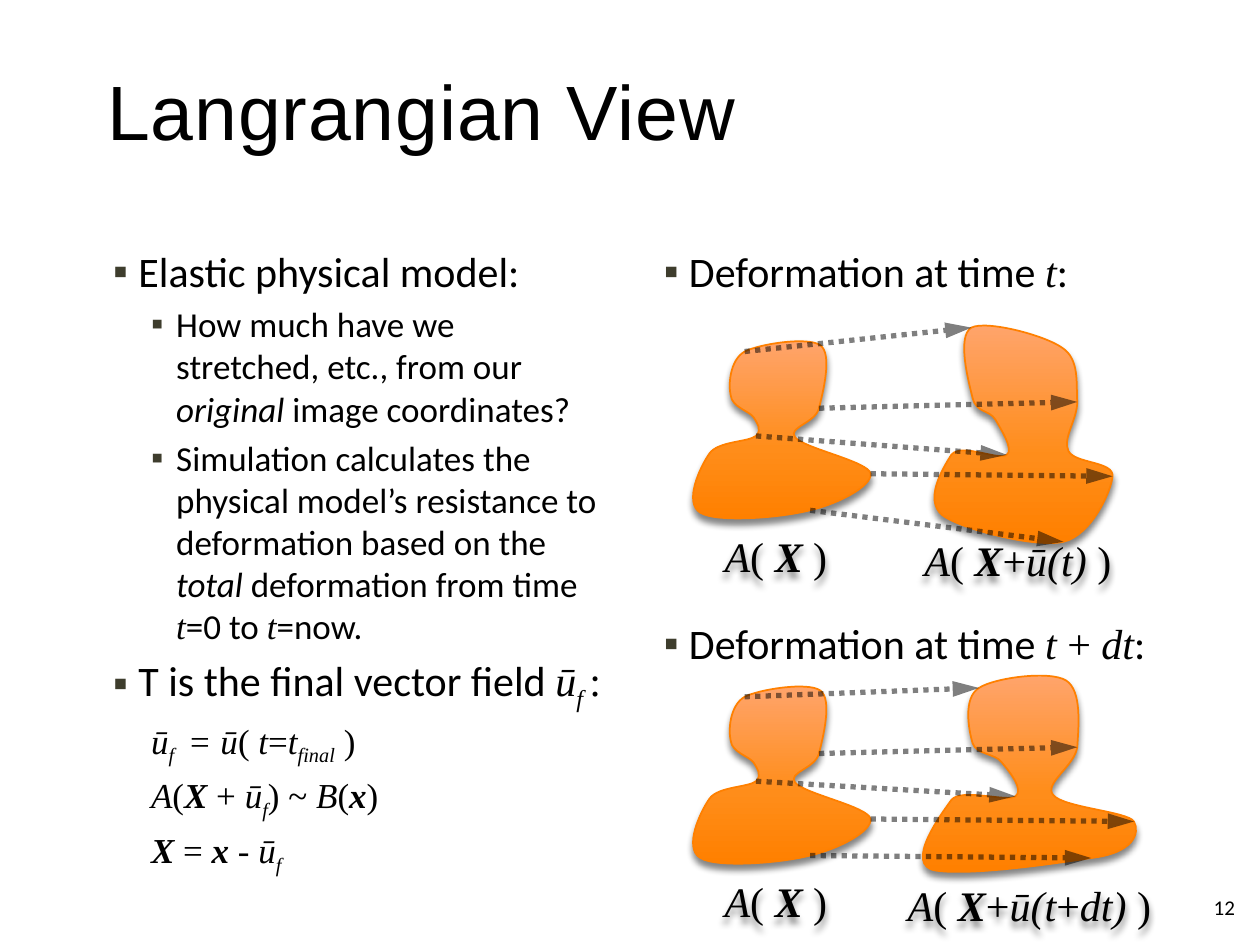
"""Build the slide comparing deformation of an elastic body at two time steps."""
import lxml.etree
import pptx
import pptx.dml.color
import pptx.enum.dml
import pptx.enum.shapes
import pptx.enum.text
import pptx.oxml
import pptx.oxml.ns
import pptx.util

PX = 9144
COLORS = {"text": "000000", "bullet": "3E3D2D", "top": "FFA46B", "middle": "FF8D1A", "base": "FF8000"}
GRADIENT = [(0, "top"), (60, "middle"), (100, "base")]
SANS, MATH, HEADING = "Calibri", "Times New Roman", "Arial"
ANCHOR = pptx.enum.text.MSO_ANCHOR
ALIGN = pptx.enum.text.PP_ALIGN

LEVELS = {
    "point": {"size": 24, "left": 25, "hang": 20, "before": 5},
    "sub": {"size": 20, "left": 55, "hang": 20, "before": 4},
    "formula": {"size": 20, "left": 35, "hang": 0, "before": 4},
    "later": {"size": 24, "left": 25, "hang": 20, "before": 184},
    "label": {"size": 24, "left": 0, "hang": 0, "before": 0},
    "number": {"size": 12, "left": 0, "hang": 0, "before": 0},
}
MODEL = [
    ("point", [("Elastic physical model:", "")]),
    ("sub", [("How much have we stretched, etc., from our ", ""), ("original", "i"), (" image coordinates?", "")]),
    ("sub", [("Simulation calculates the physical model’s resistance to deformation based on the ", ""),
             ("total", "i"), (" deformation from time ", ""), ("t", "mi"), ("=0 to ", ""), ("t", "mi"), ("=now.", "")]),
    ("point", [("T is the final vector field ", ""), ("ū", "mi"), ("f ", "mis"), (":", "m")]),
    ("formula", [("ū", "mi"), ("f ", "mis"), (" = ū", "mi"), ("( ", "m"), ("t", "mi"), ("=", "m"),
                 ("t", "mi"), ("final", "mis"), (" )", "m")]),
    ("formula", [("A", "mi"), ("(", "m"), ("X ", "mbi"), ("+ ", "m"), ("ū", "mi"), ("f", "mis"),
                 (") ~", "m"), (" B", "mi"), ("(", "m"), ("x", "mbi"), (")", "m")]),
    ("formula", [("X ", "mbi"), ("= ", "m"), ("x ", "mbi"), ("- ", "m"), ("ū", "mi"), ("f", "mis")]),
]
TIMES = [
    ("point", [("Deformation at time ", ""), ("t", "mi"), (":", "")]),
    ("later", [("Deformation at time ", ""), ("t ", "mi"), ("+ ", "m"), ("dt", "mi"), (":", "")]),
]
LABEL_X = [("A", "mi"), ("( ", "m"), ("X ", "mbi"), (") ", "m")]
LABEL_T = [("A", "mi"), ("( ", "m"), ("X", "mbi"), ("+", "m"), ("ū(t) ", "mi"), (") ", "m")]
LABEL_DT = [("A", "mi"), ("( ", "m"), ("X", "mbi"), ("+", "m"), ("ū(t", "mi"), ("+", "m"), ("dt) ", "mi"), (")", "m")]

REST = [(598, 331), (594, 326), (581, 323), (580, 314), (578, 306), (579, 286), (591, 279),
        (603, 273), (641, 267), (651, 274), (661, 281), (653, 312), (650, 324), (647, 336), (625, 339), (631, 347),
        (638, 356), (689, 366), (691, 376), (692, 386), (665, 400), (643, 405), (620, 411), (569, 415), (556, 407),
        (542, 399), (556, 370), (563, 360), (570, 350), (594, 351), (600, 346), (605, 341), (601, 336), (598, 331)]
AT_T = [(790, 333), (785, 325), (775, 328), (772, 316), (769, 304), (759, 267), (771, 260),
        (783, 254), (829, 266), (843, 276), (857, 285), (854, 305), (855, 319), (855, 333), (843, 348), (848, 358),
        (853, 368), (884, 366), (883, 378), (882, 390), (866, 425), (844, 430), (821, 435), (763, 420), (748, 409),
        (733, 397), (748, 372), (755, 361), (763, 351), (793, 366), (799, 361), (805, 357), (794, 340), (790, 333)]
AT_DT = [(795, 605), (790, 598), (775, 599), (772, 590), (769, 580), (764, 554), (777, 546),
         (789, 538), (833, 532), (846, 540), (859, 548), (856, 577), (855, 593), (853, 608), (828, 622), (836, 631),
         (844, 641), (895, 644), (900, 652), (905, 661), (900, 677), (866, 681), (833, 686), (771, 695), (743, 691),
         (716, 687), (748, 645), (755, 635), (763, 625), (800, 637), (806, 632), (813, 627), (801, 612), (795, 605)]
REST_LATER = [(x, y + 274) for x, y in REST]
STAGES = [
    [(REST, (550, 271, 141, 141), LABEL_X, 441), (AT_T, (742, 258, 141, 172), LABEL_T, 444)],
    [(REST_LATER, (550, 544, 141, 141), LABEL_X, 715), (AT_DT, (732, 536, 170, 155), LABEL_DT, 718)],
]
LINKED_KNOTS = [7, 6, 10, 2, 4]


def emu(*lengths):
    return [n * PX for n in lengths]


def rgb(name):
    return pptx.dml.color.RGBColor.from_string(COLORS[name])


def element(parent, tag, **attrs):
    return lxml.etree.SubElement(parent, pptx.oxml.ns.qn(tag), {k: str(v) for k, v in attrs.items()})


def emptied(parent, tag):
    found = parent.find(".//" + pptx.oxml.ns.qn(tag))
    for child in list(found):
        found.remove(child)
    return found


def apply(target, values):
    for name, value in values.items():
        setattr(target, name, value)


def add_run(p, text, style, size, font=None):
    r = p.add_run()
    r.text = text
    apply(r.font, {"name": font or (MATH if "m" in style else SANS), "size": pptx.util.Pt(size),
                   "italic": "i" in style, "bold": "b" in style})
    r.font.color.rgb = rgb("text")
    if "s" in style:
        r.font._element.set("baseline", "-25000")
    return r


def add_text(s, box, paragraphs, align=ALIGN.LEFT, **frame):
    sp = s.shapes.add_textbox(*emu(*box))
    tf = sp.text_frame
    apply(tf, {"word_wrap": True, **frame})
    for i, (level, runs) in enumerate(paragraphs):
        form = LEVELS[level]
        p = tf.paragraphs[0] if i == 0 else tf.add_paragraph()
        pPr = p._p.get_or_add_pPr()
        pPr.set("marL", str(form["left"] * PX))
        pPr.set("indent", str(-form["hang"] * PX))
        if form["hang"]:
            element(element(pPr, "a:buClr"), "a:srgbClr", val=COLORS["bullet"])
            element(pPr, "a:buFont", typeface=HEADING)
            element(pPr, "a:buChar", char="▪")
        apply(p, {"alignment": align, "space_before": pptx.util.Pt(form["before"] if i else 0)})
        for text, style in runs:
            add_run(p, text, style, form["size"])
    return sp


def add_shadow(sp):
    sp.shadow.inherit = False
    effects = sp._element.spPr.find(pptx.oxml.ns.qn("a:effectLst"))
    shadow = element(effects, "a:outerShdw", blurRad=48260, dist=38100, dir=5400000, algn="ctr", rotWithShape=0)
    element(element(shadow, "a:srgbClr", val=COLORS["text"]), "a:alpha", val=48000)


def add_body(s, points, box):
    left, top, width, height = box
    builder = s.shapes.build_freeform(left, top, scale=PX)
    builder.add_line_segments([(left + width, top), (left + width, top + height), (left, top + height)])
    sp = builder.convert_to_shape()
    outline = emptied(sp._element.spPr, "a:path")
    local = [(x - left, y - top) for x, y in points]
    for tag, part in [("a:moveTo", local[:1])] + [("a:cubicBezTo", local[i:i + 3]) for i in range(1, len(local), 3)]:
        step = element(outline, tag)
        for x, y in part:
            element(step, "a:pt", x=x, y=y)
    element(outline, "a:close")
    sp.fill.gradient()
    sp.fill.gradient_angle = 270
    stops = emptied(sp._element.spPr, "a:gsLst")
    for position, color in GRADIENT:
        element(element(stops, "a:gs", pos=position * 1000), "a:srgbClr", val=COLORS[color])
    sp.line.color.rgb = rgb("base")
    sp.line.width = pptx.util.Pt(1)
    add_shadow(sp)


def add_arrow(group, start, end):
    line = group.shapes.add_connector(pptx.enum.shapes.MSO_CONNECTOR.STRAIGHT, *emu(*start, *end))
    line.line.color.rgb = rgb("text")
    apply(line.line, {"width": pptx.util.Pt(3), "dash_style": pptx.enum.dml.MSO_LINE.ROUND_DOT})
    spPr = line._element.spPr
    element(spPr.find(".//" + pptx.oxml.ns.qn("a:srgbClr")), "a:alpha", val=50000)
    element(line.line._ln, "a:tailEnd", type="triangle", w="med", len="lg")
    element(spPr, "a:effectLst")


def main():
    prs = pptx.Presentation()
    prs.slide_width, prs.slide_height = emu(1000, 750)
    s = prs.slides.add_slide(prs.slide_layouts[5])
    title = s.shapes.title
    apply(title, dict(zip(("left", "top", "width", "height"), emu(75, 25, 850, 124))))
    title.text_frame.vertical_anchor = ANCHOR.MIDDLE
    p = title.text_frame.paragraphs[0]
    p.alignment = ALIGN.LEFT
    add_run(p, "Langrangian View", "", 44, HEADING).font._element.set("spc", "50")

    add_text(s, (75, 190, 415, 500), MODEL)
    add_text(s, (512, 190, 413, 500), TIMES)
    add_text(s, (890, 700, 100, 40), [("number", [("12", "")])], ALIGN.RIGHT, vertical_anchor=ANCHOR.MIDDLE)

    for bodies in STAGES:
        for points, box, label, middle in bodies:
            add_body(s, points, box)
            center = box[0] + box[2] // 2
            sp = add_text(s, (center - 110, middle - 20, 220, 40), [("label", label)], ALIGN.CENTER,
                          vertical_anchor=ANCHOR.MIDDLE, margin_top=0, margin_bottom=0)
            add_shadow(sp)
        group = s.shapes.add_group_shape()
        before, after = (body[0] for body in bodies)
        for knot in LINKED_KNOTS:
            add_arrow(group, before[3 * knot], after[3 * knot])
    prs.save("out.pptx")


if __name__ == "__main__":
    main()
